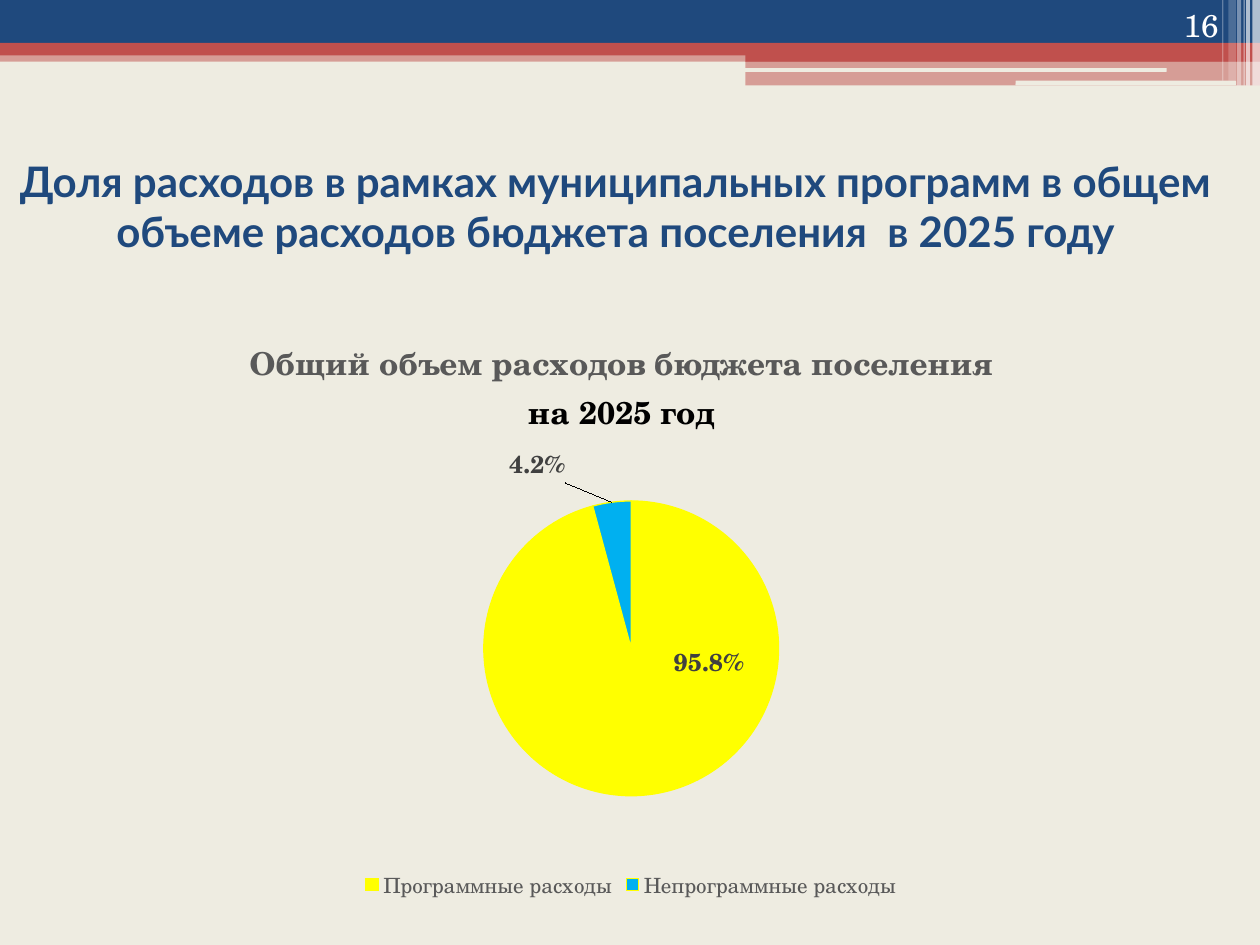
"""Build the slide on the share of programme spending in the 2025 budget."""
from dataclasses import dataclass

from lxml.etree import SubElement
from pptx import Presentation
from pptx.chart.data import CategoryChartData
from pptx.dml.color import RGBColor as RGB
from pptx.enum.chart import XL_CHART_TYPE as CHART, XL_LABEL_POSITION as POS, XL_LEGEND_POSITION as LEGEND
from pptx.enum.shapes import MSO_SHAPE as SHAPE
from pptx.enum.text import MSO_ANCHOR as ANCHOR, PP_ALIGN as ALIGN
from pptx.oxml import parse_xml
from pptx.oxml.ns import nsdecls, qn
from pptx.util import Pt


@dataclass(frozen=True)
class Theme:
    paper: str = "EEECE1"
    navy: str = "1F497D"
    red: str = "C0504D"
    white: str = "FFFFFF"
    black: str = "000000"
    grey: str = "595959"
    label: str = "404040"
    yellow: str = "FFFF00"
    blue: str = "00B0F0"
    head_font: str = "Lato"
    body_font: str = "TeX Gyre Schola"
    head_size: int = 24
    sub_size: int = 18
    label_size: int = 14
    legend_size: int = 12


T = Theme()


def set_font(font, size, color, name=T.body_font, bold=False):
    font.size, font.name, font.bold = Pt(size), name, bold
    font.color.rgb = RGB.from_string(color)


def add_bar(s, box, color, alpha=100, kind=SHAPE.RECTANGLE):
    sp = s.shapes.add_shape(kind, *map(Pt, box))
    sp.shadow.inherit = False
    sp.line.fill.background()
    sp.fill.solid()
    sp.fill.fore_color.rgb = RGB.from_string(color)
    if alpha < 100:
        clr = sp.fill._xPr.find(".//" + qn("a:srgbClr"))
        SubElement(clr, qn("a:alpha"), val=str(alpha * 1000))


def add_header(s):
    add_bar(s, (0, 28.8, 720, 6.5), T.red, 50)
    add_bar(s, (0, 0, 720, 24.5), T.navy)
    add_bar(s, (0, 24.5, 720, 7.2), T.red)
    add_bar(s, (426, 28, 294, 7.2), T.red)
    add_bar(s, (426, 34.9, 294, 13.9), T.red, 50)
    for box in ((425.5, 38.9, 241.2, 2.2), (580.3, 46.1, 126, 2.7)):
        add_bar(s, box, T.paper, kind=SHAPE.ROUNDED_RECTANGLE)
    for x, w, h, alpha in (
        (715.7, 4.3, 49, 65), (712.1, 2.2, 49, 65), (710.6, 0.7, 49, 60),
        (707, 2.2, 49, 40), (702, 4.3, 46.1, 20), (698.4, 0.7, 46.1, 30),
    ):
        add_bar(s, (x, 0, w, h), T.white, alpha)


def add_text(s, box, text, align, anchor, **font):
    tf = s.shapes.add_textbox(*map(Pt, box)).text_frame
    tf.word_wrap, tf.vertical_anchor = True, anchor
    p = tf.paragraphs[0]
    p.text, p.alignment = text, align
    set_font(p.font, **font)


def set_layout(parent, index, **values):
    old = parent.find(qn("c:layout"))
    if old is not None:
        index = parent.index(old)
        parent.remove(old)
    items = "".join(f'<c:{k} val="{v}"/>' for k, v in values.items())
    parent.insert(index, parse_xml(
        f'<c:layout {nsdecls("c")}><c:manualLayout>{items}</c:manualLayout></c:layout>'))


def add_chart_title(chart):
    tf = chart.chart_title.text_frame
    lines = (("Общий объем расходов бюджета поселения", T.grey), ("на 2025 год", T.black))
    for i, (text, color) in enumerate(lines):
        p = tf.add_paragraph() if i else tf.paragraphs[0]
        r = p.add_run()
        r.text = text
        set_font(r.font, T.sub_size, color, bold=True)
    set_layout(chart.chart_title._element, 1, xMode="edge", yMode="edge", x=0.16, y=0.04)


def add_pie(s, box):
    data = CategoryChartData(number_format="0.0%")
    data.categories = ["Программные расходы", "Непрограммные расходы"]
    data.add_series("Расходы", (0.958, 0.042))
    chart = s.shapes.add_chart(CHART.PIE, *map(Pt, box), data).chart
    set_font(chart.font, 10, T.black)
    add_chart_title(chart)
    chart.has_legend = True
    chart.legend.position, chart.legend.include_in_layout = LEGEND.BOTTOM, False
    set_font(chart.legend.font, T.legend_size, T.grey)
    set_layout(chart._chartSpace.chart.plotArea, 0, layoutTarget="inner",
               xMode="edge", yMode="edge", x=0.37, y=0.32, w=0.26, h=0.5)
    plot = chart.plots[0]
    plot.vary_by_categories = True
    series = plot.series[0]
    labels = series.data_labels
    labels.show_value, labels.number_format = True, "0.0%"
    labels.number_format_is_linked = False
    set_font(labels.font, T.label_size, T.label, bold=True)
    slices = ((T.yellow, POS.CENTER, 0.06, -0.1), (T.blue, POS.OUTSIDE_END, -0.04, -0.02))
    for i, (color, position, dx, dy) in enumerate(slices):
        point = series.points[i]
        point.format.fill.solid()
        point.format.fill.fore_color.rgb = RGB.from_string(color)
        point.format.line.color.rgb = RGB.from_string(T.yellow)
        point.format.line.width = Pt(0.75)
        set_font(point.data_label.font, T.label_size, T.label, bold=True)
        point.data_label.position = position
        set_layout(labels._element.findall(qn("c:dLbl"))[i], 1, x=dx, y=dy)


def main():
    prs = Presentation()
    prs.slide_width, prs.slide_height = Pt(720), Pt(540)
    s = prs.slides.add_slide(prs.slide_layouts[6])
    s.background.fill.solid()
    s.background.fill.fore_color.rgb = RGB.from_string(T.paper)
    add_header(s)
    add_text(s, (0, 60.5, 703.4, 113.8),
             "Доля расходов в рамках муниципальных программ в общем "
             "объеме расходов бюджета поселения  в 2025 году",
             ALIGN.CENTER, ANCHOR.MIDDLE,
             size=T.head_size, color=T.navy, name=T.head_font, bold=True)
    add_pie(s, (36.7, 176.4, 648, 340.6))
    add_text(s, (643.7, 0, 59.8, 28.8), "16", ALIGN.RIGHT, ANCHOR.BOTTOM,
             size=T.sub_size, color=T.white)
    prs.save("out.pptx")


if __name__ == "__main__":
    main()
